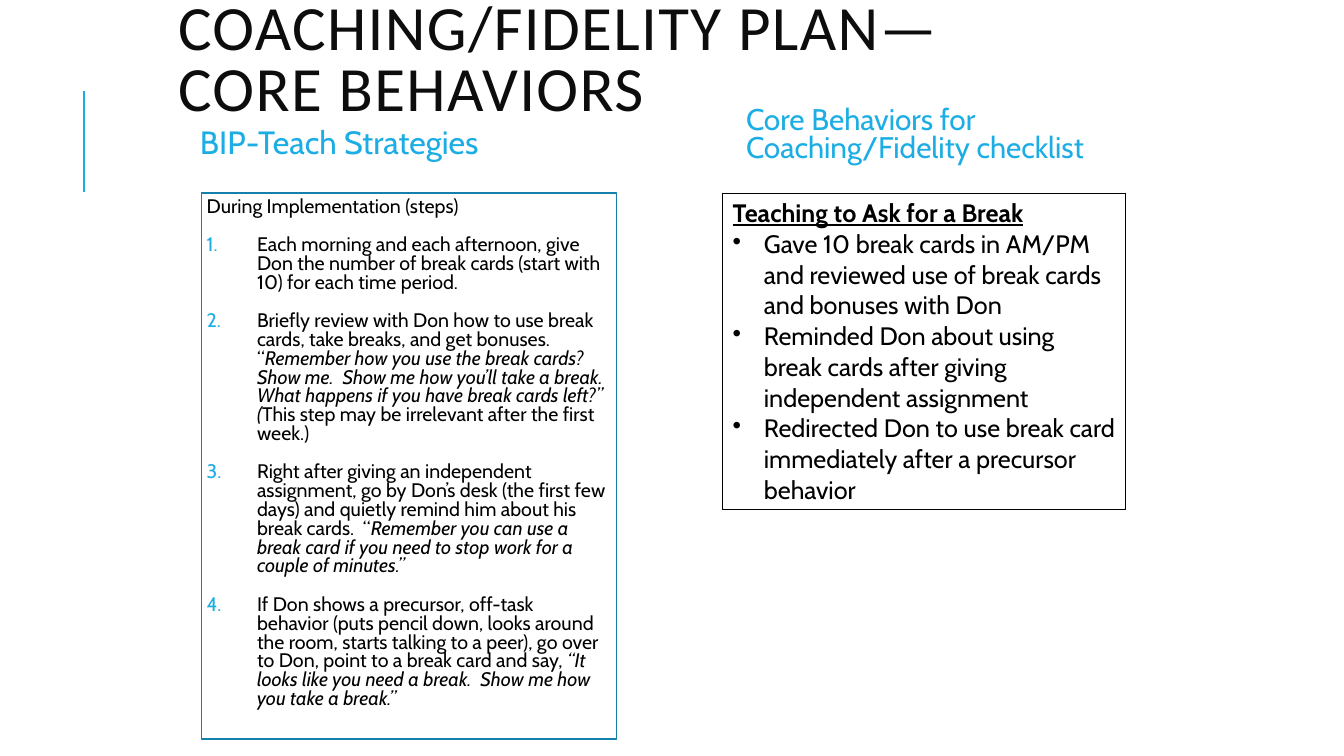
from dataclasses import dataclass
from lxml.etree import SubElement
from pptx import Presentation
from pptx.dml.color import RGBColor
from pptx.enum.shapes import MSO_CONNECTOR, MSO_SHAPE
from pptx.enum.text import MSO_ANCHOR, MSO_AUTO_SIZE, PP_ALIGN
from pptx.oxml.ns import qn
from pptx.util import Inches, Pt


@dataclass
class Theme:
    ink: str = "000000"
    dark: str = "0D0D0D"
    blue: str = "1CADE4"
    edge: str = "1580A9"
    font: str = "Cabin"
    caps: str = "Calibri"
    title: float = 45
    head: float = 23
    side: float = 21.3
    list: float = 18
    step: float = 14


theme = Theme()
deck = Presentation()
deck.slide_width, deck.slide_height = Inches(13.33), Inches(7.5)
slide = deck.slides.add_slide(deck.slide_layouts[5])
shapes = slide.shapes
unit = deck.slide_height / 9  # the slide is a grid of 16 columns by 9 rows


def grid(*cells):
    return [round(cell * unit) for cell in cells]


def write(frame, text, size, color=theme.ink, font=theme.font, lines=1.0, before=0,
          after=0, indent=0, mark=None, tint=None, bold=False, track=0):
    """Add a paragraph; parts between asterisks are italic, bold text is underlined."""
    para = frame.paragraphs[0]
    if para.runs:
        para = frame.add_paragraph()
    para.alignment = PP_ALIGN.LEFT
    para.line_spacing = lines
    para.space_before, para.space_after = Pt(before), Pt(after)
    if mark:
        props = para._p.get_or_add_pPr()
        props.set("marL", str(Inches(indent)))
        props.set("indent", str(-Inches(indent)))
        if tint:
            SubElement(SubElement(props, qn("a:buClr")), qn("a:srgbClr"), val=tint)
        if mark == "1.":
            SubElement(props, qn("a:buAutoNum"), type="arabicPeriod")
        else:
            SubElement(props, qn("a:buChar"), char=mark)
    for spot, part in enumerate(text.split("*")):
        if not part:
            continue
        run = para.add_run()
        run.text = part
        run.font.name, run.font.size = font, Pt(size)
        run.font.color.rgb = RGBColor.from_string(color)
        run.font.italic = spot % 2 == 1
        run.font.bold = run.font.underline = bold
        if track:
            run._r.get_or_add_rPr().set("spc", str(track * 100))


# Accent line
accent = shapes.add_connector(MSO_CONNECTOR.STRAIGHT, *grid(1, 2.28, 1, 1.08))
accent.line.color.rgb = RGBColor.from_string(theme.blue)
accent.line.width = Pt(1.5)
SubElement(accent._element.spPr, qn("a:effectLst"))

# Title
title = shapes.title
title.left, title.top, title.width, title.height = grid(2, 0, 10.9, 1.5)
frame = title.text_frame
frame.word_wrap, frame.auto_size = True, MSO_AUTO_SIZE.NONE
frame.vertical_anchor = MSO_ANCHOR.MIDDLE
write(frame, "COACHING/FIDELITY PLAN—CORE BEHAVIORS", theme.title,
      color=theme.dark, font=theme.caps, lines=0.8, track=1)

# Column heads
heads = [
    ("BIP-Teach Strategies", 2.2, 1.3, theme.head, 0.9),
    ("Core Behaviors for Coaching/Fidelity checklist", 8.7, 1.2, theme.side, 0.8),
]
for text, left, top, size, lines in heads:
    frame = shapes.add_textbox(*grid(left, top, 4.8, 0.84)).text_frame
    frame.word_wrap = True
    frame.vertical_anchor = MSO_ANCHOR.MIDDLE
    frame.margin_left = frame.margin_right = Inches(0.15)
    write(frame, text, size, color=theme.blue, lines=lines)

# Strategy steps
steps = [
    "Each morning and each afternoon, give Don the number of break cards "
    "(start with 10) for each time period.",
    "Briefly review with Don how to use break cards, take breaks, and get bonuses.  “"
    "*Remember how you use the break cards?  Show me.  Show me how you’ll take a break.  "
    "What happens if you have break cards left?”  (*"
    "This step may be irrelevant after the first week.)",
    "Right after giving an independent assignment, go by Don’s desk (the first few days) "
    "and quietly remind him about his break cards.  “"
    "*Remember you can use a break card if you need to stop work for a couple of minutes.”*",
    "If Don shows a precursor, off-task behavior (puts pencil down, looks around the room, "
    "starts talking to a peer), go over to Don, point to a break card and say, "
    "*“It looks like you need a break.  Show me how you take a break.”*",
]
frame = shapes.add_textbox(*grid(2.4, 2.3, 4.9, 6.5)).text_frame
frame.word_wrap = True
frame.margin_left = frame.margin_right = Inches(0.05)
write(frame, "During Implementation (steps)", theme.step, lines=0.8, after=2)
for step in steps:
    write(frame, step, theme.step, lines=0.8, before=12, after=2,
          indent=0.5, mark="1.", tint=theme.blue)

# Checklist
table = shapes.add_table(1, 1, *grid(8.6, 2.3, 4.8, 3.77)).table
table.first_row = table.horz_banding = False
cell = table.cell(0, 0)
for side in ("a:lnL", "a:lnR", "a:lnT", "a:lnB"):
    edge = SubElement(cell._tc.get_or_add_tcPr(), qn(side), w=str(Pt(1)))
    SubElement(SubElement(edge, qn("a:solidFill")), qn("a:srgbClr"), val=theme.ink)
cell.fill.background()
write(cell.text_frame, "Teaching to Ask for a Break", theme.list, bold=True)
for check in [
    "Gave 10 break cards in AM/PM and reviewed use of break cards and bonuses with Don",
    "Reminded Don about using break cards after giving independent assignment",
    "Redirected Don to use break card immediately after a precursor behavior",
]:
    write(cell.text_frame, check, theme.list, indent=0.31, mark="•")

# Frame around the steps
border = shapes.add_shape(MSO_SHAPE.RECTANGLE, *grid(2.4, 2.3, 4.94, 6.5))
border.shadow.inherit = False
border.fill.background()
border.line.color.rgb = RGBColor.from_string(theme.edge)
border.line.width = Pt(1.25)

deck.save("out.pptx")
